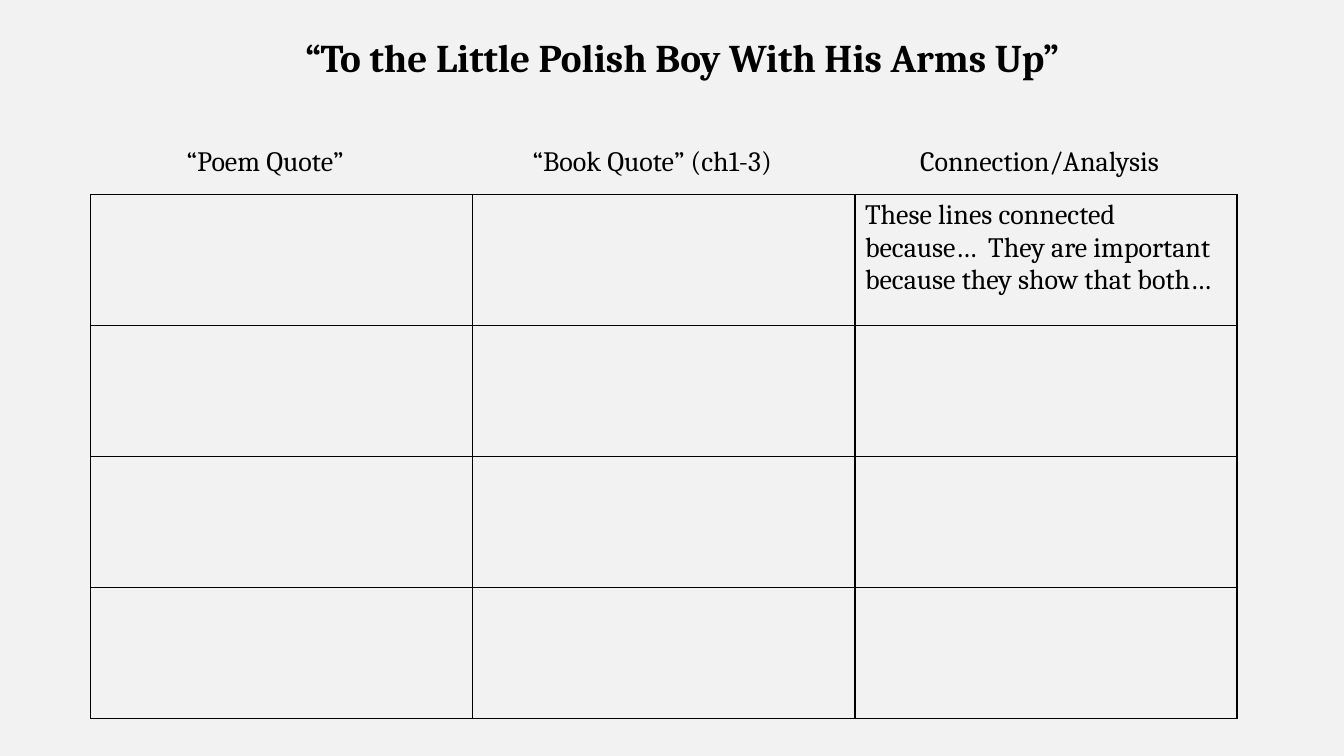
from lxml import etree
from pptx import Presentation
from pptx.dml.color import RGBColor
from pptx.enum.text import MSO_ANCHOR, MSO_AUTO_SIZE, PP_ALIGN
from pptx.oxml.ns import qn
from pptx.util import Inches, Pt

TOP, CENTER, LEFT = MSO_ANCHOR.TOP, PP_ALIGN.CENTER, PP_ALIGN.LEFT
NO_FIT = MSO_AUTO_SIZE.NONE

# Content
TITLE = "“To the Little Polish Boy With His Arms Up”"
HEADS = ["“Poem Quote”", "“Book Quote” (ch1-3)", "Connection/Analysis"]
ROWS = [
    ["", "", "These lines connected because…  They are important "
             "because they show that both…"],
    ["", "", ""],
    ["", "", ""],
    ["", "", ""],
]
COLORS = {"back": "F2F2F2", "ink": "000000"}
FONT = "Cambria"

# Grid, in inches
EDGE, GRID_TOP = 0.9, 1.93
COL_W, ROW_H = 3.79, 1.3
HEAD_MID, HEAD_STEP = 2.63, 3.84


def color(name):
    return RGBColor.from_string(COLORS[name])


def write(frame, text, size, align=LEFT, bold=False):
    frame.text = text
    frame.word_wrap = True
    para = frame.paragraphs[0]
    para.alignment = align
    for font in [para.font] + [run.font for run in para.runs]:
        font.name, font.size, font.bold = FONT, Pt(size), bold
        font.color.rgb = color("ink")


def border(cell):
    props = cell._tc.get_or_add_tcPr()
    for i, side in enumerate(("lnL", "lnR", "lnT", "lnB")):
        line = etree.Element(qn("a:" + side), w=str(Pt(1)))
        fill = etree.SubElement(line, qn("a:solidFill"))
        etree.SubElement(fill, qn("a:srgbClr"), val=COLORS["ink"])
        props.insert(i, line)


deck = Presentation()
deck.slide_width, deck.slide_height = Inches(13.33), Inches(7.5)
slide = deck.slides.add_slide(deck.slide_layouts[5])
slide.background.fill.solid()
slide.background.fill.fore_color.rgb = color("back")

# Title
title = slide.shapes.title
title.left, title.top = Inches(EDGE), Inches(0.28)
title.width, title.height = Inches(11.73), Inches(0.6)
write(title.text_frame, TITLE, 28, CENTER, True)
title.text_frame.vertical_anchor = TOP
title.text_frame.auto_size = NO_FIT

# Column heads
for i, head in enumerate(HEADS):
    left = HEAD_MID + i * HEAD_STEP - COL_W / 2
    box = slide.shapes.add_textbox(
        Inches(left), Inches(1.37), Inches(COL_W), Inches(0.42))
    write(box.text_frame, head, 20, CENTER)

# Table
table = slide.shapes.add_table(
    len(ROWS), len(HEADS), Inches(EDGE), Inches(GRID_TOP),
    Inches(COL_W * len(HEADS)), Inches(ROW_H * len(ROWS))).table
table.first_row = table.horz_banding = False
for r, row in enumerate(ROWS):
    for c, text in enumerate(row):
        cell = table.cell(r, c)
        cell.fill.background()
        border(cell)
        write(cell.text_frame, text, 20)

deck.save("out.pptx")
